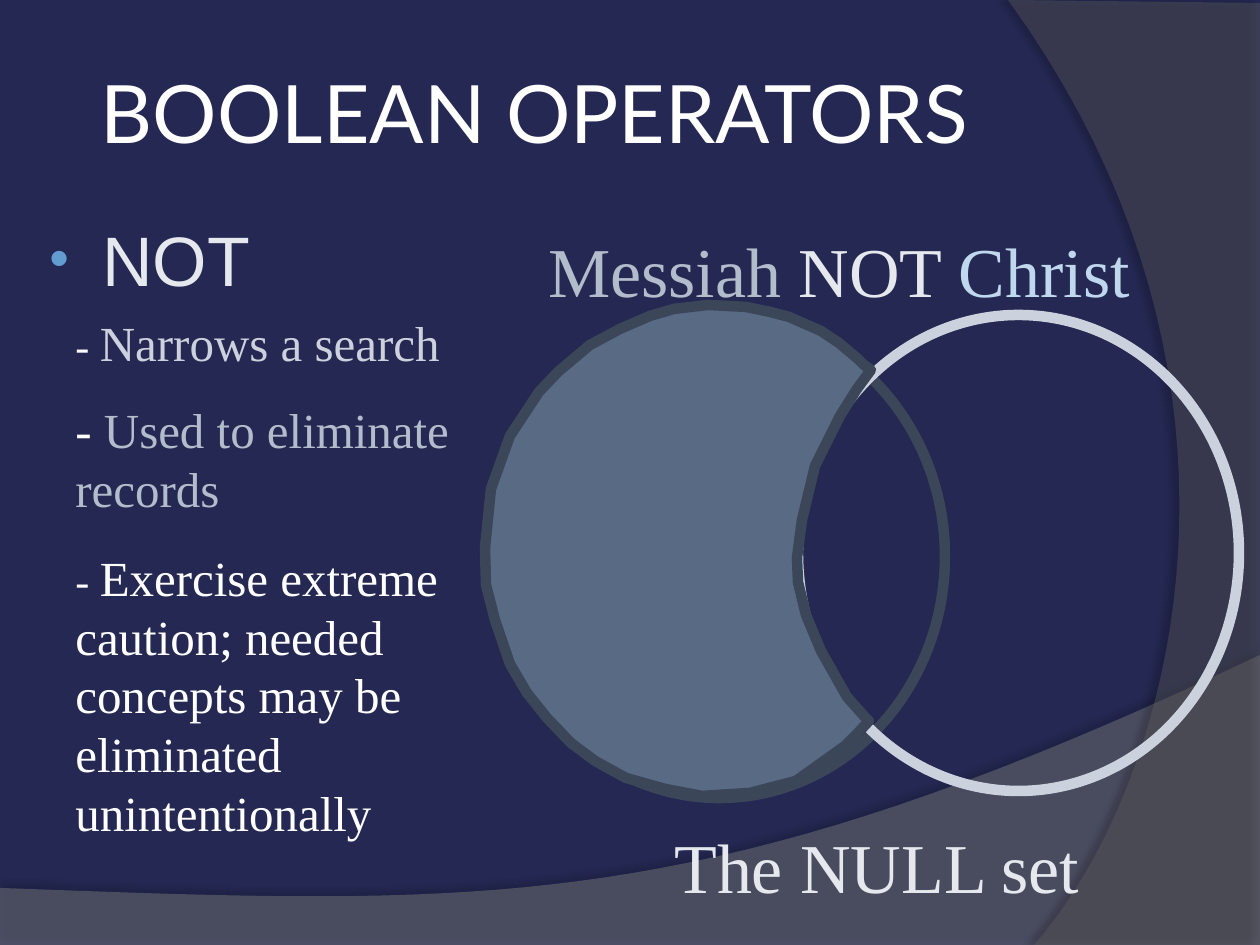
from lxml import etree
from pptx import Presentation
from pptx.dml.color import RGBColor
from pptx.enum.shapes import MSO_SHAPE
from pptx.enum.text import MSO_ANCHOR
from pptx.oxml import parse_xml
from pptx.oxml.ns import nsdecls, qn
from pptx.util import Pt

ELLIPSE = MSO_SHAPE.OVAL
MIDDLE = MSO_ANCHOR.MIDDLE
PX = 914400 / 126
SERIF = "Times New Roman"
WHITE, PALE, LIGHT, MUTED = "FFFFFF", "E5E9EE", "CCD2DD", "B2BCCB"
SKY, SLATE, STEEL = "C0D8ED", "3B4759", "596A85"

# Crescent outline, relative to the diagram box
CRESCENT = [
    (379, 60), (373, 54), (354, 38), (336, 26), (304, 12), (285, 7), (261, 2),
    (223, 0), (189, 4), (165, 11), (135, 24), (105, 40), (73, 67), (54, 87),
    (25, 131), (6, 184), (0, 243), (1, 280), (10, 315), (25, 359), (42, 388),
    (62, 413), (86, 438), (110, 456), (141, 473), (180, 484), (217, 491),
    (265, 488), (311, 476), (360, 441), (373, 428), (384, 416), (379, 411),
    (362, 392), (336, 346), (321, 310), (313, 277), (312, 253), (317, 215),
    (330, 161), (355, 111), (372, 84), (386, 65),
]


def px(length):
    return round(length * PX)


def color(hex_string):
    return RGBColor.from_string(hex_string)


def curve(start, control_1, control_2, end, steps=40):
    """Points along a cubic Bezier curve."""
    points = []
    for step in range(steps + 1):
        t = step / steps
        weights = ((1 - t) ** 3, 3 * t * (1 - t) ** 2, 3 * t * t * (1 - t), t ** 3)
        points.append(tuple(
            sum(weight * value for weight, value in zip(weights, values))
            for values in zip(start, control_1, control_2, end)
        ))
    return points


def add_outline(slide, points, fill, left=0, top=0):
    points = [(px(left + x), px(top + y)) for x, y in points]
    builder = slide.shapes.build_freeform(*points[0])
    builder.add_line_segments(points[1:], close=True)
    shape = builder.convert_to_shape()
    shape.shadow.inherit = False
    shape.fill.solid()
    shape.fill.fore_color.rgb = color(fill)
    return shape


def add_sweep(slide, points, fill, opacity, shadow_opacity, distance, direction):
    """Translucent background shape with a soft shadow."""
    shape = add_outline(slide, points, fill)
    shape.line.fill.background()
    properties = shape.element.spPr
    fill_color = properties.find(qn("a:solidFill"))[0]
    etree.SubElement(fill_color, qn("a:alpha")).set("val", str(opacity * 1000))
    properties.find(qn("a:effectLst")).append(parse_xml(
        f'<a:outerShdw {nsdecls("a")} blurRad="{Pt(4)}" dist="{Pt(distance)}" '
        f'dir="{direction * 60000}" rotWithShape="0"><a:srgbClr val="000000">'
        f'<a:alpha val="{shadow_opacity * 1000}"/></a:srgbClr></a:outerShdw>'
    ))


def add_background(slide, width, height):
    slide.background.fill.solid()
    slide.background.fill.fore_color.rgb = color("242852")
    wave = curve((width, 655), (704, 919), (493, 906), (0, 888))
    add_sweep(slide, [(0, height), (width, height)] + wave, "7F7F7F", 45, 35, 3.5, 270)
    arc = curve((1034, height), (1178, 780), (1283, 378), (1008, 0))
    add_sweep(slide, [(width, 3), (width, height)] + arc, "5E5E5E", 40, 45, 4, 180)


def add_text(slide, box, runs, font=SERIF, indent=0, hanging=0):
    """Text box with one paragraph of (text, size, colour) runs."""
    text_box = slide.shapes.add_textbox(*map(px, box))
    frame = text_box.text_frame
    frame.word_wrap = True
    paragraph = frame.paragraphs[0]
    paragraph.font.name = font
    properties = paragraph._p.get_or_add_pPr()
    properties.set("marL", str(px(indent)))
    properties.set("indent", str(px(-hanging)))
    for text, size, hex_string in runs:
        run = paragraph.add_run()
        run.text = text
        run.font.size = Pt(size)
        run.font.color.rgb = color(hex_string)
    return text_box


def add_title(slide, box):
    frame = add_text(slide, box, [("BOOLEAN OPERATORS", 46, WHITE)], "Lato").text_frame
    frame.vertical_anchor = MIDDLE
    frame.margin_left = frame.margin_right = px(6)


def add_notes_column(slide, left, top):
    heading = add_text(slide, (left + 32, top, 525, 84), [("NOT", 40, PALE)],
                       "Arial", indent=58, hanging=53)
    properties = heading.text_frame.paragraphs[0]._p.get_or_add_pPr()
    bullet = (
        '<a:buClr {}><a:srgbClr val="629DD1"/></a:buClr>',
        '<a:buSzPct {} val="80000"/>',
        '<a:buFont {} typeface="Arial"/>',
        '<a:buChar {} char="•"/>',
    )
    for position, xml in enumerate(bullet):
        properties.insert(position, parse_xml(xml.format(nsdecls("a"))))

    points = [
        (96, 462, 72, 24, "Narrows a search", LIGHT),
        (183, 536, 131, 28, "Used to eliminate records", MUTED),
        (331, 504, 310, 24, "Exercise extreme caution; needed concepts may be "
                            "eliminated unintentionally", WHITE),
    ]
    for offset, width, height, dash_size, text, hex_string in points:
        add_text(slide, (left, top + offset, width, height),
                 [("- ", dash_size, WHITE), (text, 28, hex_string)], indent=63)


def add_circle(slide, box, line):
    shape = slide.shapes.add_shape(ELLIPSE, *map(px, box))
    shape.shadow.inherit = False
    shape.fill.background()
    set_line(shape, line)


def set_line(shape, hex_string):
    shape.line.color.rgb = color(hex_string)
    shape.line.width = Pt(6)


def add_venn_diagram(slide, left, top):
    add_circle(slide, (left + 9, top + 10, 451, 483), SLATE)
    add_text(slide, (left + 51, top - 84, 630, 97),
             [("Messiah ", 40, MUTED), ("NOT ", 40, PALE), ("Christ", 40, SKY)])
    add_circle(slide, (left + 313, top + 10, 441, 476), LIGHT)
    set_line(add_outline(slide, CRESCENT, STEEL, left, top), SLATE)
    add_text(slide, (left + 177, top + 512, 441, 97), [("The NULL set", 40, PALE)])


def main():
    presentation = Presentation()
    width, height = 1260, 945
    presentation.slide_width, presentation.slide_height = px(width), px(height)
    slide = presentation.slides.add_slide(presentation.slide_layouts[6])
    add_background(slide, width, height)
    add_title(slide, (95, 32, 1071, 158))
    add_notes_column(slide, 0, 210)
    add_venn_diagram(slide, 485, 305)
    presentation.save("out.pptx")


if __name__ == "__main__":
    main()
